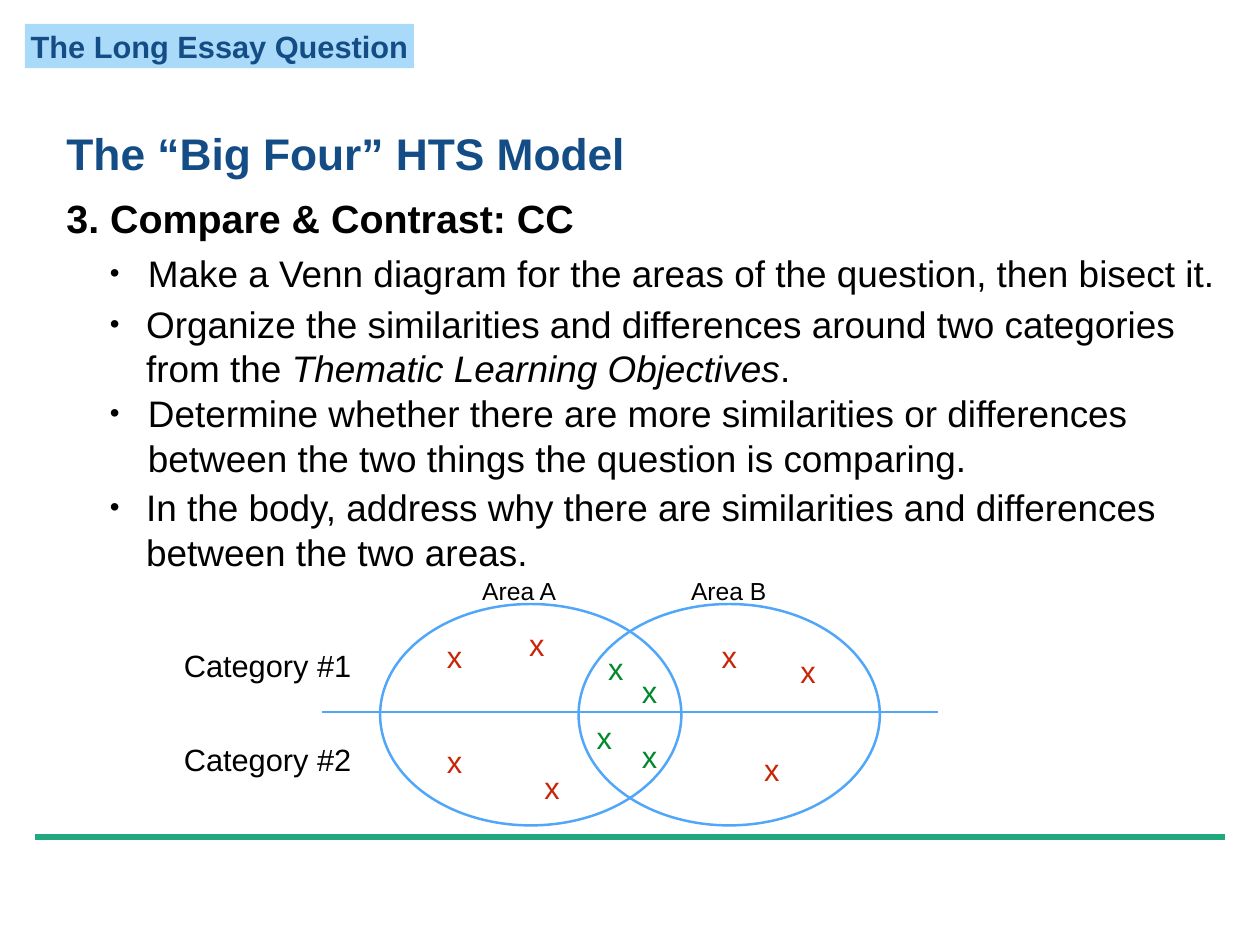
"""Build the slide on the compare and contrast step of the essay model."""
from dataclasses import dataclass

from lxml import etree
from pptx import Presentation
from pptx.dml.color import RGBColor
from pptx.enum.shapes import MSO_CONNECTOR, MSO_SHAPE
from pptx.enum.text import MSO_ANCHOR, MSO_AUTO_SIZE, PP_ALIGN
from pptx.oxml.ns import qn
from pptx.util import Pt

RECTANGLE, OVAL = MSO_SHAPE.RECTANGLE, MSO_SHAPE.OVAL
STRAIGHT = MSO_CONNECTOR.STRAIGHT
LEFT, CENTER = PP_ALIGN.LEFT, PP_ALIGN.CENTER
TOP, MIDDLE = MSO_ANCHOR.TOP, MSO_ANCHOR.MIDDLE
NO_AUTOFIT = MSO_AUTO_SIZE.NONE

EMU_PER_PX = 9144
FONT = "Arial"
INSET = 6
COLORS = {
    "navy": "144D85",
    "tag": "AADAF9",
    "rule": "21A87E",
    "venn": "50A7F9",
    "text": "000000",
    "similarity": "00882B",
    "difference": "C82506",
}


@dataclass(frozen=True)
class Box:
    left: int
    top: int
    width: int
    height: int

    def emu(self) -> tuple[int, int, int, int]:
        return px(self.left), px(self.top), px(self.width), px(self.height)


@dataclass(frozen=True)
class Style:
    size: int
    color: str = "text"
    bold: bool = False
    align: PP_ALIGN = CENTER


@dataclass(frozen=True)
class Label:
    text: str
    box: Box
    style: Style


@dataclass(frozen=True)
class Bullet:
    runs: tuple[tuple[str, bool], ...]
    indent: int
    space_before: float


@dataclass(frozen=True)
class Rule:
    left: int
    right: int
    y: int
    color: str
    weight: int


TITLE = Label("The “Big Four” HTS Model", Box(69, 139, 650, 68),
              Style(36, "navy", True, LEFT))
TAG = Label("The Long Essay Question", Box(28, 27, 439, 50), Style(25, "navy", True))
LIST_BOX = Box(118, 277, 1265, 370)
LIST_STYLE = Style(30, align=LEFT)
BULLETS = (
    Bullet((("Make a Venn diagram for the areas of the question, then bisect it.", False),),
           43, 0),
    Bullet((("Organize the similarities and differences around two categories from the ", False),
            ("Thematic Learning Objectives", True), (".", False)), 41, 5.5),
    Bullet((("Determine whether there are more similarities or differences between "
             "the two things the question is comparing.", False),), 43, 0.5),
    Bullet((("In the body, address why there are similarities and differences "
             "between the two areas.", False),), 41, 4.5),
)
LABELS = (
    Label("3. Compare & Contrast: CC", Box(69, 215, 590, 61), Style(32, bold=True, align=LEFT)),
    Label("Area A", Box(529, 646, 114, 42), Style(20)),
    Label("Area B", Box(774, 646, 97, 42), Style(20)),
    Label("Category #1", Box(201, 726, 202, 50), Style(25)),
    Label("Category #2", Box(201, 832, 202, 50), Style(25)),
)
AREAS = tuple(Box(left, 682, 340, 250) for left in (429, 653))
FOOTER_RULE = Rule(40, 1383, 945, "rule", 5)
BISECTOR = Rule(363, 1059, 804, "venn", 2)
MARKS = {
    "similarity": ((718, 756), (680, 729), (718, 829), (667, 807)),
    "difference": ((498, 834), (591, 702), (808, 716), (856, 843),
                   (608, 864), (498, 716), (897, 733)),
}


def px(length: int) -> int:
    return length * EMU_PER_PX


def rgb(name: str) -> RGBColor:
    return RGBColor.from_string(COLORS[name])


def set_frame(frame, anchor: MSO_ANCHOR, wrap: bool) -> None:
    frame.auto_size = NO_AUTOFIT
    frame.word_wrap = wrap
    frame.vertical_anchor = anchor
    frame.margin_left = frame.margin_right = px(INSET)
    frame.margin_top = frame.margin_bottom = px(INSET)


def set_style(paragraph, style: Style) -> None:
    paragraph.alignment = style.align
    font = paragraph.font
    font.name, font.size, font.bold = FONT, Pt(style.size), style.bold
    font.color.rgb = rgb(style.color)


def place(shape, box: Box) -> None:
    shape.left, shape.top, shape.width, shape.height = box.emu()


def write_label(shape, label: Label) -> None:
    frame = shape.text_frame
    set_frame(frame, MIDDLE, label.style.align == LEFT)
    frame.text = label.text
    set_style(frame.paragraphs[0], label.style)


def add_label(slide, label: Label) -> None:
    write_label(slide.shapes.add_textbox(*label.box.emu()), label)


def add_tag(slide, label: Label) -> None:
    tag = slide.shapes.add_shape(RECTANGLE, *label.box.emu())
    tag.shadow.inherit = False
    tag.fill.solid()
    tag.fill.fore_color.rgb = rgb("tag")
    tag.line.fill.background()
    write_label(tag, label)


def add_area(slide, box: Box) -> None:
    area = slide.shapes.add_shape(OVAL, *box.emu())
    area.shadow.inherit = False
    area.fill.background()
    area.line.color.rgb = rgb("venn")
    area.line.width = Pt(2)


def add_rule(slide, rule: Rule) -> None:
    line = slide.shapes.add_connector(
        STRAIGHT, px(rule.left), px(rule.y), px(rule.right), px(rule.y))
    line.line.color.rgb = rgb(rule.color)
    line.line.width = Pt(rule.weight)
    etree.SubElement(line._element.spPr, qn("a:effectLst"))


def set_bullet(paragraph, indent: int) -> None:
    properties = paragraph._p.get_or_add_pPr()
    properties.set("marL", str(px(indent)))
    properties.set("indent", str(-px(indent)))
    color = etree.SubElement(properties, qn("a:buClr"))
    etree.SubElement(color, qn("a:srgbClr"), val=COLORS["text"])
    etree.SubElement(properties, qn("a:buSzPct"), val="75000")
    etree.SubElement(properties, qn("a:buFont"), typeface=FONT)
    etree.SubElement(properties, qn("a:buChar"), char="•")


def write_list(body, bullets: tuple[Bullet, ...]) -> None:
    place(body, LIST_BOX)
    frame = body.text_frame
    set_frame(frame, TOP, True)
    for index, bullet in enumerate(bullets):
        paragraph = frame.add_paragraph() if index else frame.paragraphs[0]
        set_bullet(paragraph, bullet.indent)
        paragraph.line_spacing = Pt(36)
        paragraph.space_before = Pt(bullet.space_before)
        set_style(paragraph, LIST_STYLE)
        for text, italic in bullet.runs:
            run = paragraph.add_run()
            run.text = text
            if italic:
                run.font.italic = True


def main() -> None:
    presentation = Presentation()
    presentation.slide_width, presentation.slide_height = px(1422), px(1067)
    slide = presentation.slides.add_slide(presentation.slide_layouts[1])
    title, body = slide.placeholders
    place(title, TITLE.box)
    write_label(title, TITLE)
    write_list(body, BULLETS)
    add_tag(slide, TAG)
    add_rule(slide, FOOTER_RULE)
    for area in AREAS:
        add_area(slide, area)
    add_rule(slide, BISECTOR)
    for label in LABELS:
        add_label(slide, label)
    for kind, corners in MARKS.items():
        for left, top in corners:
            add_label(slide, Label("x", Box(left, top, 30, 50), Style(25, kind)))
    presentation.save("out.pptx")


if __name__ == "__main__":
    main()
